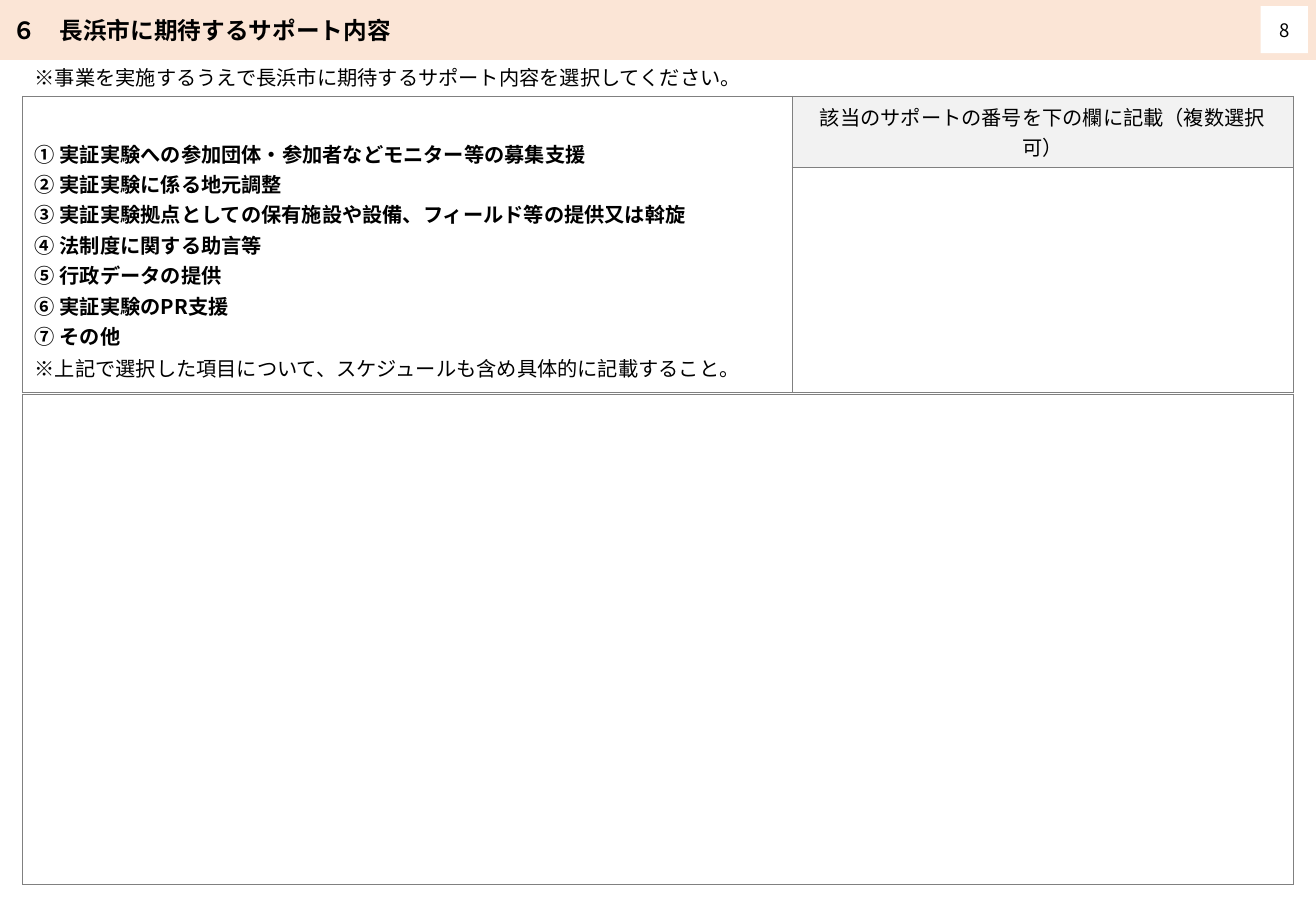
from lxml import etree
from pptx import Presentation
from pptx import util as u
from pptx.dml.color import RGBColor
from pptx.enum import shapes, text
from pptx.oxml import ns

FONT = "Noto Sans CJK JP"
WIDTH, HEIGHT = 780, 540
LEFT, CONTENT_WIDTH = 13.5, 753
BAR_HEIGHT = 35.3
PEACH, WHITE, GREY, BLACK = "FBE5D6", "FFFFFF", "F2F2F2", "000000"
BORDER = "808080"


def write(frame, lines, size=12, bold=False, align=text.PP_ALIGN.LEFT, spacing=None):
    """Fill a text frame with one paragraph per line."""
    frame.word_wrap = True
    for index, line in enumerate(lines.split("\n")):
        paragraph = frame.add_paragraph() if index else frame.paragraphs[0]
        paragraph.alignment = align
        if spacing:
            paragraph.line_spacing = u.Pt(spacing)
        run = paragraph.add_run()
        run.text = line
        run.font.size, run.font.bold, run.font.name = u.Pt(size), bold, FONT
        run.font.color.rgb = RGBColor.from_string(BLACK)
        etree.SubElement(run._r.get_or_add_rPr(), ns.qn("a:ea"), typeface=FONT)


def add_grid(slide, top, column_widths, row_heights):
    """Add an unfilled table with thin grey borders."""
    table = slide.shapes.add_table(
        len(row_heights), len(column_widths), u.Pt(LEFT), u.Pt(top),
        u.Pt(sum(column_widths)), u.Pt(sum(row_heights))).table
    table.first_row = table.horz_banding = False
    for column, width in zip(table.columns, column_widths):
        column.width = u.Pt(width)
    for row, height in zip(table.rows, row_heights):
        row.height = u.Pt(height)
    for cell in table.iter_cells():
        properties = cell._tc.get_or_add_tcPr()
        for side in ("lnL", "lnR", "lnT", "lnB"):
            line = etree.SubElement(properties, ns.qn(f"a:{side}"), w=str(u.Pt(0.5)))
            fill = etree.SubElement(line, ns.qn("a:solidFill"))
            etree.SubElement(fill, ns.qn("a:srgbClr"), val=BORDER)
        cell.fill.background()
        cell.vertical_anchor = text.MSO_ANCHOR.MIDDLE
    return table


presentation = Presentation()
presentation.slide_width, presentation.slide_height = u.Pt(WIDTH), u.Pt(HEIGHT)
slide = presentation.slides.add_slide(presentation.slide_layouts[5])

# Title bar
title = slide.shapes.title
title.left, title.top = u.Pt(0), u.Pt(0)
title.width, title.height = u.Pt(WIDTH), u.Pt(BAR_HEIGHT)
title.fill.solid()
title.fill.fore_color.rgb = RGBColor.from_string(PEACH)
title.line.color.rgb = RGBColor.from_string(PEACH)
title.line.width = u.Pt(1)
title.text_frame.auto_size = text.MSO_AUTO_SIZE.NONE
title.text_frame.vertical_anchor = text.MSO_ANCHOR.MIDDLE
write(title.text_frame, "６　長浜市に期待するサポート内容", size=14, bold=True)

# Support options and the answer column
options = add_grid(slide, 57, (456, 297), (42, 133.3))
options.cell(0, 0).merge(options.cell(1, 0))
write(options.cell(0, 0).text_frame, """① 実証実験への参加団体・参加者などモニター等の募集支援
② 実証実験に係る地元調整
③ 実証実験拠点としての保有施設や設備、フィールド等の提供又は斡旋
④ 法制度に関する助言等
⑤ 行政データの提供
⑥ 実証実験のPR支援
⑦ その他""", bold=True, spacing=18)
answer_header = options.cell(0, 1)
answer_header.fill.solid()
answer_header.fill.fore_color.rgb = RGBColor.from_string(GREY)
write(answer_header.text_frame, "該当のサポートの番号を下の欄に記載（複数選択可）",
      align=text.PP_ALIGN.CENTER)

# Free description area
add_grid(slide, 233.5, (CONTENT_WIDTH,), (290.5,))

# Instructions above each table
for top, instruction in (
        (35.3, "※事業を実施するうえで長浜市に期待するサポート内容を選択してください。"),
        (207.9, "※上記で選択した項目について、スケジュールも含め具体的に記載すること。")):
    note = slide.shapes.add_textbox(u.Pt(LEFT), u.Pt(top), u.Pt(CONTENT_WIDTH), u.Pt(21.8))
    write(note.text_frame, instruction)

# Page number
page_box = slide.shapes.add_shape(
    shapes.MSO_SHAPE.RECTANGLE, u.Pt(747.2), u.Pt(3.6), u.Pt(28), u.Pt(28))
page_box.shadow.inherit = False
page_box.fill.solid()
page_box.fill.fore_color.rgb = RGBColor.from_string(WHITE)
page_box.line.fill.background()
page_box.text_frame.vertical_anchor = text.MSO_ANCHOR.MIDDLE
write(page_box.text_frame, "8", size=11, align=text.PP_ALIGN.CENTER)

presentation.save("out.pptx")
